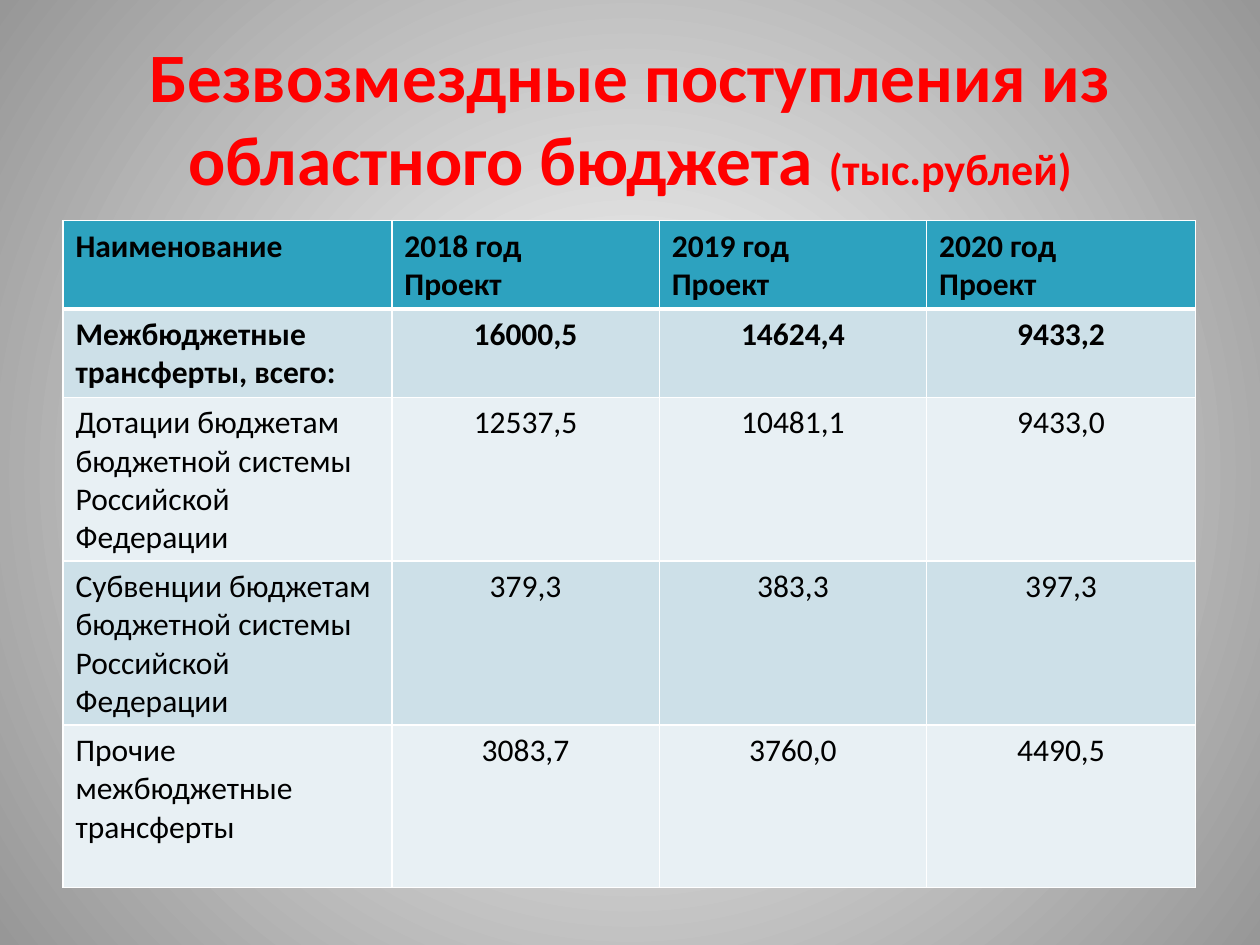
from lxml import etree
from pptx import Presentation
from pptx.dml.color import RGBColor
from pptx.enum.text import MSO_ANCHOR, PP_ALIGN
from pptx.oxml import parse_xml
from pptx.oxml.ns import qn
from pptx.util import Cm, Pt

RED = RGBColor(0xFF, 0x00, 0x00)
BLACK = RGBColor(0x00, 0x00, 0x00)
WHITE = RGBColor(0xFF, 0xFF, 0xFF)
GREY = RGBColor(0x97, 0x97, 0x97)
TEAL = RGBColor(0x2D, 0xA2, 0xBF)
BAND_DARK = RGBColor(0xCD, 0xE0, 0xE8)
BAND_LIGHT = RGBColor(0xE8, 0xF0, 0xF4)
FONT = "Calibri"
NS = 'xmlns:a="http://schemas.openxmlformats.org/drawingml/2006/main"'
SHADOW = (f'<a:effectLst {NS}><a:outerShdw blurRad="50800" dist="38100" dir="2700000">'
          '<a:srgbClr val="000000"><a:alpha val="70000"/></a:srgbClr></a:outerShdw></a:effectLst>')


def add_run(p, text, size, color, bold):
    r = p.add_run()
    r.text = text
    r.font.size = Pt(size)
    r.font.bold = bold
    r.font.color.rgb = color
    r.font.name = FONT
    return r


def set_border(cell, side, points):
    ln = etree.SubElement(cell._tc.get_or_add_tcPr(), qn(f"a:{side}"), w=str(Pt(points)))
    fill = etree.SubElement(ln, qn("a:solidFill"))
    etree.SubElement(fill, qn("a:srgbClr"), val=str(WHITE))


prs = Presentation()
prs.slide_width = Cm(25.4)
prs.slide_height = Cm(19.05)
s = prs.slides.add_slide(prs.slide_layouts[6])

bg = s.background.fill
bg.gradient()
for stop, color, position in zip(bg.gradient_stops, (WHITE, GREY), (0, 1)):
    stop.color.rgb = color
    stop.position = position
grad = s.element.find(".//" + qn("a:gradFill"))
grad.remove(grad.find(qn("a:lin")))
grad.insert(1, parse_xml(f'<a:path {NS} path="circle">'
                         '<a:fillToRect l="50000" t="50000" r="50000" b="50000"/></a:path>'))

title = s.shapes.add_textbox(Cm(1.27), Cm(0.76), Cm(22.86), Cm(3.18))
tf = title.text_frame
tf.word_wrap = True
tf.vertical_anchor = MSO_ANCHOR.MIDDLE
p = tf.paragraphs[0]
p.alignment = PP_ALIGN.CENTER
for text, size in (("Безвозмездные поступления из областного бюджета ", 39.6),
                   ("(тыс.рублей)", 25.2)):
    r = add_run(p, text, size, RED, True)
    r.font._element.find(qn("a:solidFill")).addnext(parse_xml(SHADOW))

rows = [
    ["Наименование", "2018 год\nПроект", "2019 год\nПроект", "2020 год\nПроект"],
    ["Межбюджетные трансферты, всего:", "16000,5", "14624,4", "9433,2"],
    ["Дотации бюджетам бюджетной системы Российской Федерации", "12537,5", "10481,1", "9433,0"],
    ["Субвенции бюджетам бюджетной системы Российской Федерации", "379,3", "383,3", "397,3"],
    ["Прочие межбюджетные трансферты", "3083,7", "3760,0", "4490,5"],
]
widths = [6.63, 5.39, 5.39, 5.42]
heights = [1.77, 1.77, 3.28, 3.28, 3.28]
fills = [TEAL, BAND_DARK, BAND_LIGHT, BAND_DARK, BAND_LIGHT]

table = s.shapes.add_table(len(rows), len(widths), Cm(1.27), Cm(4.45),
                           Cm(sum(widths)), Cm(sum(heights))).table
for column, width in zip(table.columns, widths):
    column.width = Cm(width)
for i, texts in enumerate(rows):
    table.rows[i].height = Cm(heights[i])
    for j, text in enumerate(texts):
        cell = table.cell(i, j)
        for side in ("lnL", "lnR", "lnT", "lnB"):
            thick = (i, side) in ((0, "lnB"), (1, "lnT"))
            set_border(cell, side, 3 if thick else 1)
        cell.fill.solid()
        cell.fill.fore_color.rgb = fills[i]
        tf = cell.text_frame
        for k, line in enumerate(text.split("\n")):
            p = tf.add_paragraph() if k else tf.paragraphs[0]
            p.alignment = PP_ALIGN.CENTER if i and j else PP_ALIGN.LEFT
            add_run(p, line, 18, BLACK, i < 2)

prs.save("out.pptx")
